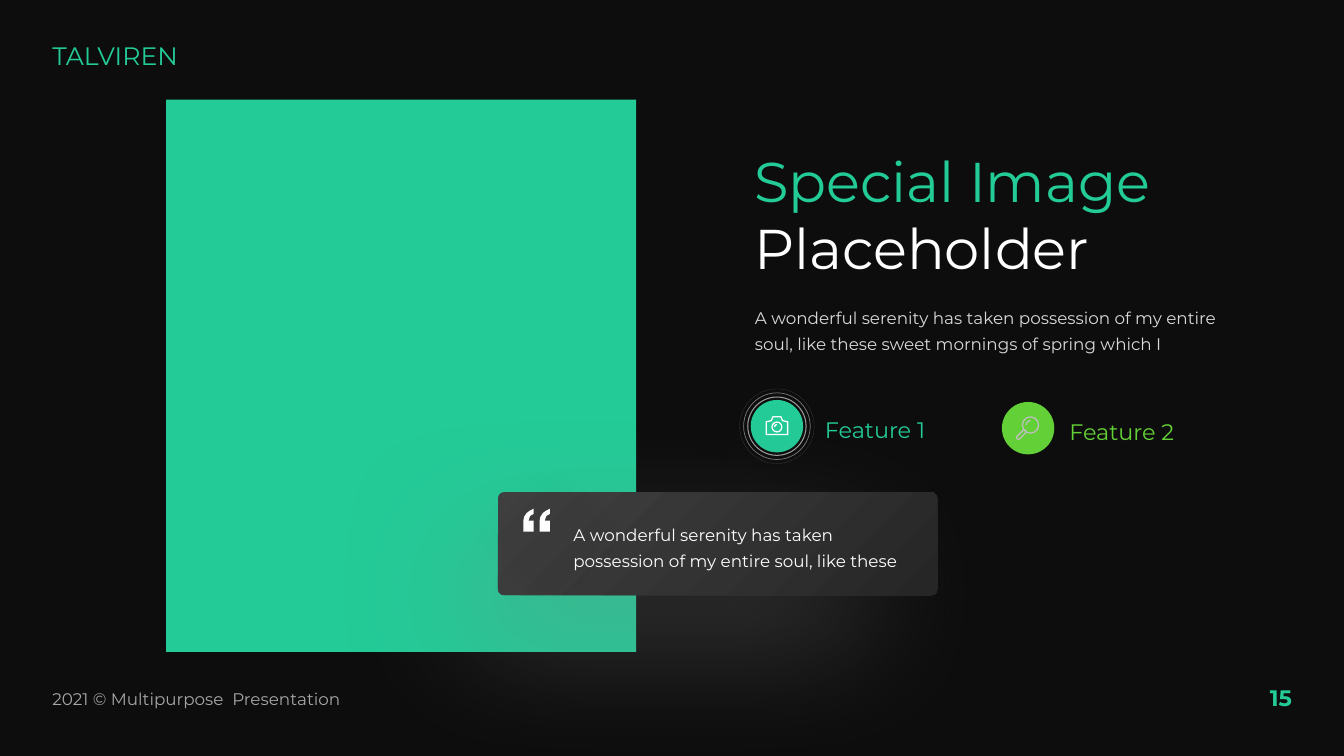
from dataclasses import dataclass

from lxml import etree
from pptx import Presentation
from pptx import util as u
from pptx.dml import color
from pptx.enum import shapes, text
from pptx.oxml import ns

SHAPE = shapes.MSO_SHAPE
ALIGN = text.PP_ALIGN
ANCHOR = text.MSO_ANCHOR


@dataclass(frozen=True)
class Theme:
    """Colours, font and type sizes of the slide."""
    font: str = "Montserrat"
    back: str = "0D0D0D"
    green: str = "23CB97"
    lime: str = "62D036"
    white: str = "FFFFFF"
    pale: str = "D9D9D9"
    silver: str = "BFBFBF"
    grey: str = "A6A6A6"
    glow: str = "808080"
    black: str = "000000"
    card: tuple = ("404040", "262626")
    title: int = 40
    brand: int = 18
    label: int = 16
    body: int = 12


T = Theme()


def rgb(value):
    """Turn a hex string into a colour."""
    return color.RGBColor.from_string(value)


def place(sp, x, y, w, h):
    """Set position and size in centimetres."""
    for name, value in dict(left=x, top=y, width=w, height=h).items():
        setattr(sp, name, u.Cm(value))


def write(sp, lines, size, anchor=ANCHOR.TOP, bold=False, **para):
    """Fill a text frame with (text, colour) paragraphs."""
    tf = sp.text_frame
    frame = dict(word_wrap=True, auto_size=text.MSO_AUTO_SIZE.NONE, vertical_anchor=anchor)
    for name, value in frame.items():
        setattr(tf, name, value)
    for i, (words, tint) in enumerate(lines):
        p = tf.add_paragraph() if i else tf.paragraphs[0]
        for name, value in {"alignment": ALIGN.LEFT, **para}.items():
            setattr(p, name, value)
        r = p.add_run()
        r.text = words
        for name, value in dict(name=T.font, size=u.Pt(size), bold=bold).items():
            setattr(r.font, name, value)
        r.font.color.rgb = rgb(tint)


def add_text(s, box, words, tint, size, **fmt):
    """Add a text box with one paragraph."""
    sp = s.shapes.add_textbox(*map(u.Cm, box))
    write(sp, [(words, tint)], size, **fmt)


def paint(sp, fill=None, line=None, width=0.75, alpha=100):
    """Set fill and outline, and drop the default shadow."""
    sp.shadow.inherit = False
    if fill:
        sp.fill.solid()
        sp.fill.fore_color.rgb = rgb(fill)
    else:
        sp.fill.background()
    if line:
        sp.line.color.rgb = rgb(line)
        sp.line.width = u.Pt(width)
        clr = sp.line._ln.find(".//" + ns.qn("a:srgbClr"))
        etree.SubElement(clr, ns.qn("a:alpha"), val=str(alpha * 1000))
    else:
        sp.line.fill.background()
    return sp


def cast_shadow(sp, tint, blur, dist, angle, scale=100):
    """Give a shape a soft outer shadow at 40 % opacity."""
    effects = sp._element.spPr.find(ns.qn("a:effectLst"))
    outer = etree.SubElement(effects, ns.qn("a:outerShdw"), blurRad=str(u.Pt(blur)),
                             dist=str(u.Pt(dist)), dir=str(angle * 60000),
                             sx=str(scale * 1000), sy=str(scale * 1000),
                             algn="ctr", rotWithShape="0")
    clr = etree.SubElement(outer, ns.qn("a:srgbClr"), val=tint)
    etree.SubElement(clr, ns.qn("a:alpha"), val="40000")


def add_centred(s, kind, cx, cy, w, h, **look):
    """Add a preset shape around a centre point."""
    sp = s.shapes.add_shape(kind, *map(u.Cm, (cx - w / 2, cy - h / 2, w, h)))
    return paint(sp, **look)


def add_outline(s, x, y, points, **look):
    """Add a closed polygon whose points are relative to x, y."""
    pts = [(u.Cm(x + dx), u.Cm(y + dy)) for dx, dy in points]
    fb = s.shapes.build_freeform(*pts[0], scale=1.0)
    fb.add_line_segments(pts[1:], close=True)
    return paint(fb.convert_to_shape(), **look)


def add_lens(s, cx, cy, size, glare, tint):
    """Draw a lens ring with a quarter arc of glare."""
    add_centred(s, SHAPE.OVAL, cx, cy, size, size, line=tint, width=0.9)
    arc = add_centred(s, SHAPE.ARC, cx, cy, glare, glare, line=tint, width=0.9)
    arc.adjustments[0], arc.adjustments[1] = 108, 162


def camera(s, cx, cy):
    """Draw the camera icon."""
    half = [(0.1, -0.24), (0.14, -0.14), (0.27, -0.11), (0.27, 0.21)]
    mirror = [(-dx, dy) for dx, dy in reversed(half)]
    add_outline(s, cx, cy, half + mirror, line=T.white, width=0.9)
    add_lens(s, cx, cy + 0.02, 0.25, 0.12, T.white)


def magnifier(s, cx, cy):
    """Draw the magnifying glass icon."""
    add_lens(s, cx + 0.06, cy - 0.08, 0.41, 0.22, T.silver)
    handle = add_centred(s, SHAPE.ROUNDED_RECTANGLE, cx - 0.17, cy + 0.16, 0.3, 0.09,
                         line=T.silver, width=0.9)
    handle.adjustments[0] = 0.5
    handle.rotation = -45


def frame_texts(s, box):
    """Place brand, footer and page number at the slide's edges."""
    x, y, w, h = box
    add_text(s, (x, y, 3.91, 1.02), "TALVIREN", T.green, T.brand, anchor=ANCHOR.BOTTOM)
    add_text(s, (x + w - 2.13, y + h - 0.93, 2.13, 0.94), "15", T.green, T.label,
             bold=True, alignment=ALIGN.RIGHT)
    add_text(s, (x, y + h - 0.83, 10.62, 0.76), "2021 © Multipurpose  Presentation",
             T.grey, T.body)


def image_panel(s, box):
    """Place the green panel."""
    paint(s.shapes.add_shape(SHAPE.RECTANGLE, *map(u.Cm, box)), fill=T.green)


def heading(s, box):
    """Place the two-colour title and the paragraph below it."""
    x, y, w, h = box
    title, body = s.shapes.title, s.placeholders[1]
    place(title, x, y, w, 3.68)
    write(title, [("Special Image", T.green), ("Placeholder", T.white)], T.title,
          space_before=u.Pt(0))
    place(body, x + 0.02, y + h - 1.88, w, 1.88)
    write(body, [("A wonderful serenity has taken possession of my entire soul, "
                  "like these sweet mornings of spring which I", T.pale)], T.body,
          line_spacing=1.3, space_before=u.Pt(10))
    pPr = body.text_frame.paragraphs[0]._p.get_or_add_pPr()
    for name in ("marL", "indent"):
        pPr.set(name, "0")
    etree.SubElement(pPr, ns.qn("a:buNone"))


def feature(s, box, label, tint, icon, gap, rings=()):
    """Place an icon disc, its rings and its label."""
    x, y, w, h = box
    cx, cy = x + h / 2, y + h / 2
    disc = add_centred(s, SHAPE.OVAL, cx, cy, h, h, fill=tint)
    if rings:
        cast_shadow(disc, T.back, 26, 25, 135)
    for size, width, alpha in rings:
        add_centred(s, SHAPE.OVAL, cx, cy, size, size, line=T.pale, width=width, alpha=alpha)
    icon(s, cx, cy)
    add_text(s, (x + h + gap, cy - 0.52, w - h - gap, 1.02), label, tint, T.label,
             line_spacing=1.2)


def quote_card(s, box):
    """Place the gradient card with quote marks and text."""
    x, y, w, h = box
    sp = paint(s.shapes.add_shape(SHAPE.ROUNDED_RECTANGLE, *map(u.Cm, box)))
    sp.adjustments[0] = 0.06
    sp.fill.gradient()
    sp.fill.gradient_angle = -45
    for stop, tint, pos in zip(sp.fill.gradient_stops, T.card, (0, 1)):
        stop.color.rgb = rgb(tint)
        stop.position = pos
    cast_shadow(sp, T.glow, 100, 51, 135, scale=90)
    add_text(s, (x + 1.65, y + 0.54, w - 1.83, h - 0.53),
             "A wonderful serenity has taken possession of my entire soul, like these",
             T.white, T.body, line_spacing=1.3, space_before=u.Pt(10))
    mark = [(0.26, 0), (0.26, 0.13), (0.17, 0.18), (0.13, 0.3), (0.26, 0.3), (0.26, 0.58),
            (0, 0.58), (0, 0.3), (0.02, 0.2), (0.08, 0.11), (0.16, 0.05)]
    for dx in (0.64, 1.05):
        sp = add_outline(s, x + dx, y + 0.42, mark, fill=T.white)
        cast_shadow(sp, T.black, 100, 12, 45)


def main():
    """Build the slide and save it."""
    prs = Presentation()
    prs.slide_width, prs.slide_height = u.Cm(33.87), u.Cm(19.05)
    s = prs.slides.add_slide(prs.slide_layouts[1])
    s.background.fill.solid()
    s.background.fill.fore_color.rgb = rgb(T.back)
    frame_texts(s, (1.07, 0.89, 31.74, 17.16))
    image_panel(s, (4.19, 2.51, 11.84, 13.92))
    heading(s, (18.75, 3.56, 13.03, 5.79))
    rings = ((1.47, 0.75, 70), (1.68, 0.5, 53), (1.88, 0.1, 29))
    feature(s, (18.92, 10.08, 5.36, 1.32), "Feature 1", T.green, camera, 0.3, rings)
    feature(s, (25.25, 10.13, 5.2, 1.32), "Feature 2", T.lime, magnifier, 0.13)
    quote_card(s, (12.55, 12.4, 11.07, 2.6))
    prs.save("out.pptx")


if __name__ == "__main__":
    main()
